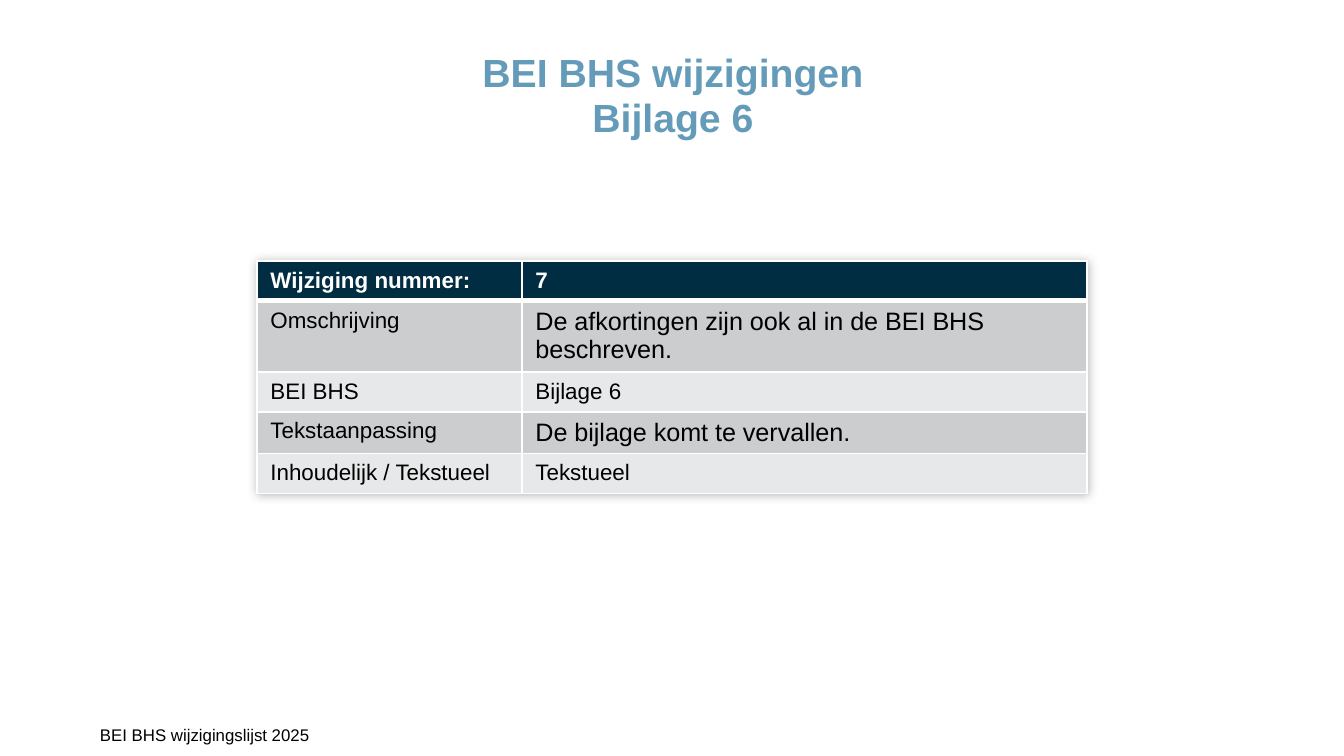
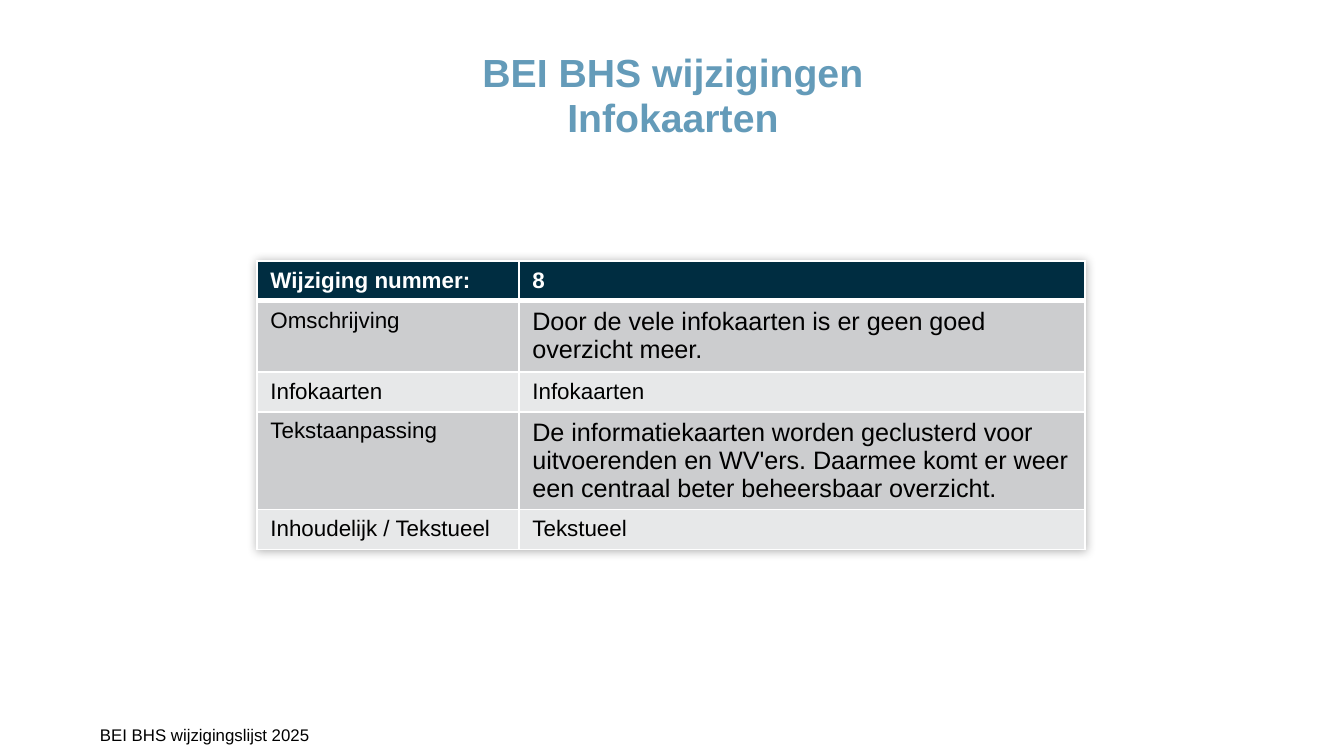
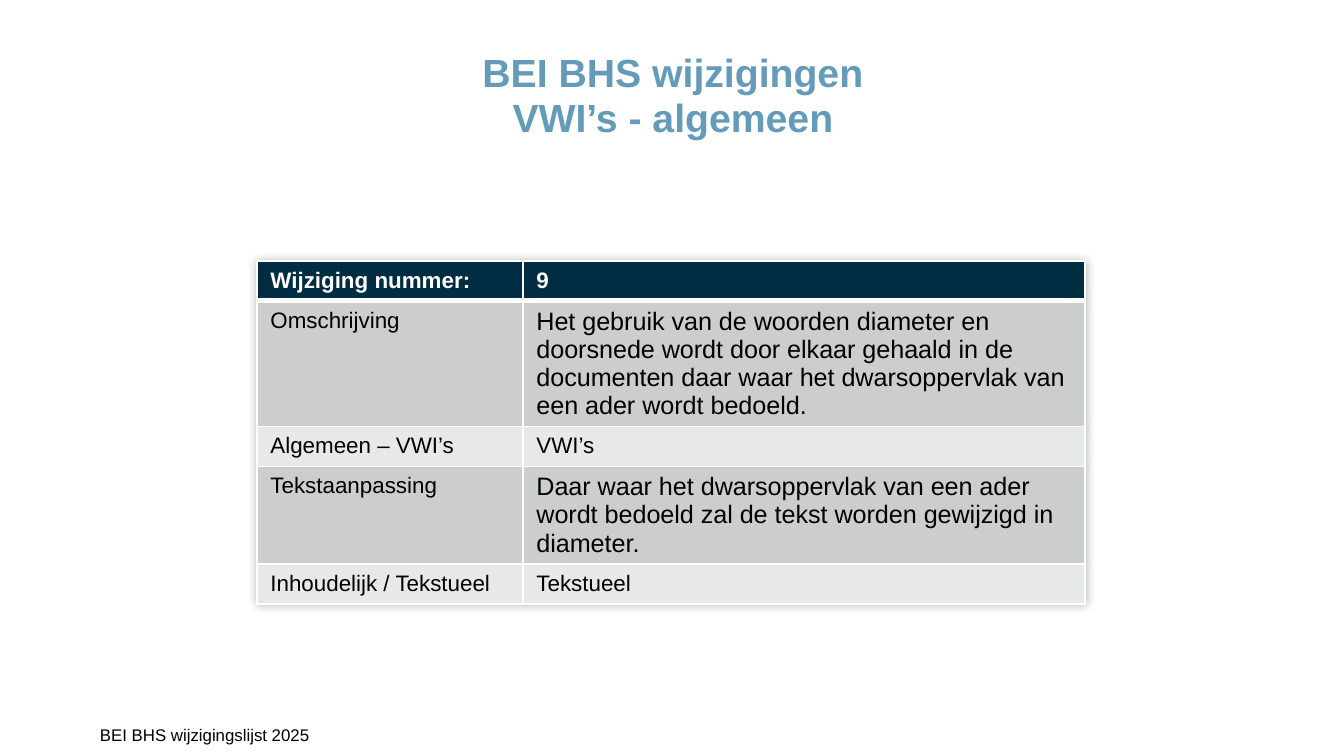
from dataclasses import dataclass

from lxml.etree import SubElement
from pptx import Presentation
from pptx.dml.color import RGBColor
from pptx.enum.text import MSO_ANCHOR, MSO_AUTO_SIZE, PP_ALIGN
from pptx.oxml import parse_xml
from pptx.oxml.ns import nsdecls, qn
from pptx.util import Emu, Pt

EMU_PER_INCH = 914400
PX_PER_INCH = 134.4


@dataclass(frozen=True)
class Theme:
    font: str = "Arial"
    title_color: str = "649BB9"
    header_fill: str = "002D41"
    dark_band: str = "CCCDCF"
    light_band: str = "E7E8E9"
    white: str = "FFFFFF"
    black: str = "000000"
    title_size: float = 21
    cell_size: float = 12
    explanation_size: float = 13.5
    footer_size: float = 9
    border: float = 1
    header_border: float = 3


@dataclass(frozen=True)
class Change:
    number: str
    subject: str
    description: str
    source_label: str
    source: str
    adjustment: str
    column_widths: tuple

    def rows(self):
        return [
            ("Wijziging nummer:", self.number),
            ("Omschrijving", self.description),
            (self.source_label, self.source),
            ("Tekstaanpassing", self.adjustment),
            ("Inhoudelijk / Tekstueel", "Tekstueel"),
        ]


THEME = Theme()
ROW_HEIGHTS = (40, 71, 40, 40, 40)
EXPLANATION_ROWS = (1, 3)

CHANGES = [
    Change(
        "7", "Bijlage 6",
        "De afkortingen zijn ook al in de BEI BHS beschreven.",
        "BEI BHS", "Bijlage 6",
        "De bijlage komt te vervallen.",
        (265, 565),
    ),
    Change(
        "8", "Infokaarten",
        "Door de vele infokaarten is er geen goed overzicht meer.",
        "Infokaarten", "Infokaarten",
        "De informatiekaarten worden geclusterd voor uitvoerenden en WV'ers. "
        "Daarmee komt er weer een centraal beter beheersbaar overzicht.",
        (262, 566),
    ),
    Change(
        "9", "VWI’s - algemeen",
        "Het gebruik van de woorden diameter en doorsnede wordt door elkaar gehaald "
        "in de documenten daar waar het dwarsoppervlak van een ader wordt bedoeld.",
        "Algemeen – VWI’s", "VWI’s",
        "Daar waar het dwarsoppervlak van een ader wordt bedoeld zal de tekst "
        "worden gewijzigd in diameter.",
        (266, 562),
    ),
]


def px(length):
    return Emu(round(length * EMU_PER_INCH / PX_PER_INCH))


def add_span(para, text, size, color, bold=False):
    span = para.add_run()
    span.text = text
    span.font.name = THEME.font
    span.font.size = Pt(size)
    span.font.bold = bold
    span.font.color.rgb = RGBColor.from_string(color)


def prepare_frame(frame):
    """Remove the insets and let the text wrap from the top."""
    frame.margin_left = frame.margin_right = 0
    frame.margin_top = frame.margin_bottom = 0
    frame.word_wrap = True
    frame.auto_size = MSO_AUTO_SIZE.NONE
    frame.vertical_anchor = MSO_ANCHOR.TOP


def set_title(page, subject):
    title = page.shapes.title
    title.left, title.top, title.width, title.height = map(px, (257, 52, 832, 126))
    prepare_frame(title.text_frame)
    para = title.text_frame.paragraphs[0]
    para.alignment = PP_ALIGN.CENTER
    para.line_spacing = 0.95
    add_span(para, "BEI BHS wijzigingen", THEME.title_size, THEME.title_color, True)
    para.add_line_break()
    add_span(para, subject, THEME.title_size, THEME.title_color, True)


def add_footer(page):
    box = page.shapes.add_textbox(*map(px, (0, 725, 634, 32)))
    prepare_frame(box.text_frame)
    box.text_frame.margin_left = px(100)
    para = box.text_frame.paragraphs[0]
    add_span(para, "BEI BHS wijzigingslijst 2025", THEME.footer_size, THEME.black)


def set_borders(cell, top, bottom):
    properties = cell._tc.get_or_add_tcPr()
    sides = {"lnL": THEME.border, "lnR": THEME.border, "lnT": top, "lnB": bottom}
    for position, (side, width) in enumerate(sides.items()):
        line = SubElement(properties, qn(f"a:{side}"), w=str(Pt(width)))
        fill = SubElement(line, qn("a:solidFill"))
        SubElement(fill, qn("a:srgbClr"), val=THEME.white)
        properties.insert(position, line)


def add_table_shadow(table):
    shadow = parse_xml(
        f'<a:effectLst {nsdecls("a")}>'
        '<a:outerShdw blurRad="63500" algn="ctr" rotWithShape="0">'
        f'<a:srgbClr val="{THEME.black}"><a:alpha val="30000"/></a:srgbClr>'
        "</a:outerShdw></a:effectLst>"
    )
    table._tbl.tblPr.insert(0, shadow)


def format_cell(cell, text, row, column):
    is_header = row == 0
    if is_header:
        fill = THEME.header_fill
    else:
        fill = THEME.dark_band if row % 2 else THEME.light_band
    cell.fill.solid()
    cell.fill.fore_color.rgb = RGBColor.from_string(fill)
    set_borders(
        cell,
        top=THEME.header_border if row == 1 else THEME.border,
        bottom=THEME.header_border if is_header else THEME.border,
    )
    is_explanation = column == 1 and row in EXPLANATION_ROWS
    size = THEME.explanation_size if is_explanation else THEME.cell_size
    color = THEME.white if is_header else THEME.black
    add_span(cell.text_frame.paragraphs[0], text, size, color, is_header)


def add_change_table(page, change):
    rows = change.rows()
    widths = change.column_widths
    frame = page.shapes.add_table(
        len(rows), len(widths), px(257), px(261), px(sum(widths)), px(sum(ROW_HEIGHTS))
    )
    table = frame.table
    add_table_shadow(table)
    for column, width in zip(table.columns, widths):
        column.width = px(width)
    for row_index, texts in enumerate(rows):
        table.rows[row_index].height = px(ROW_HEIGHTS[row_index])
        for column_index, text in enumerate(texts):
            cell = table.cell(row_index, column_index)
            format_cell(cell, text, row_index, column_index)


def main():
    deck = Presentation()
    deck.slide_width, deck.slide_height = px(1344), px(756)
    title_only = deck.slide_layouts[5]
    for change in CHANGES:
        page = deck.slides.add_slide(title_only)
        set_title(page, change.subject)
        add_change_table(page, change)
        add_footer(page)
    deck.save("out.pptx")


if __name__ == "__main__":
    main()
